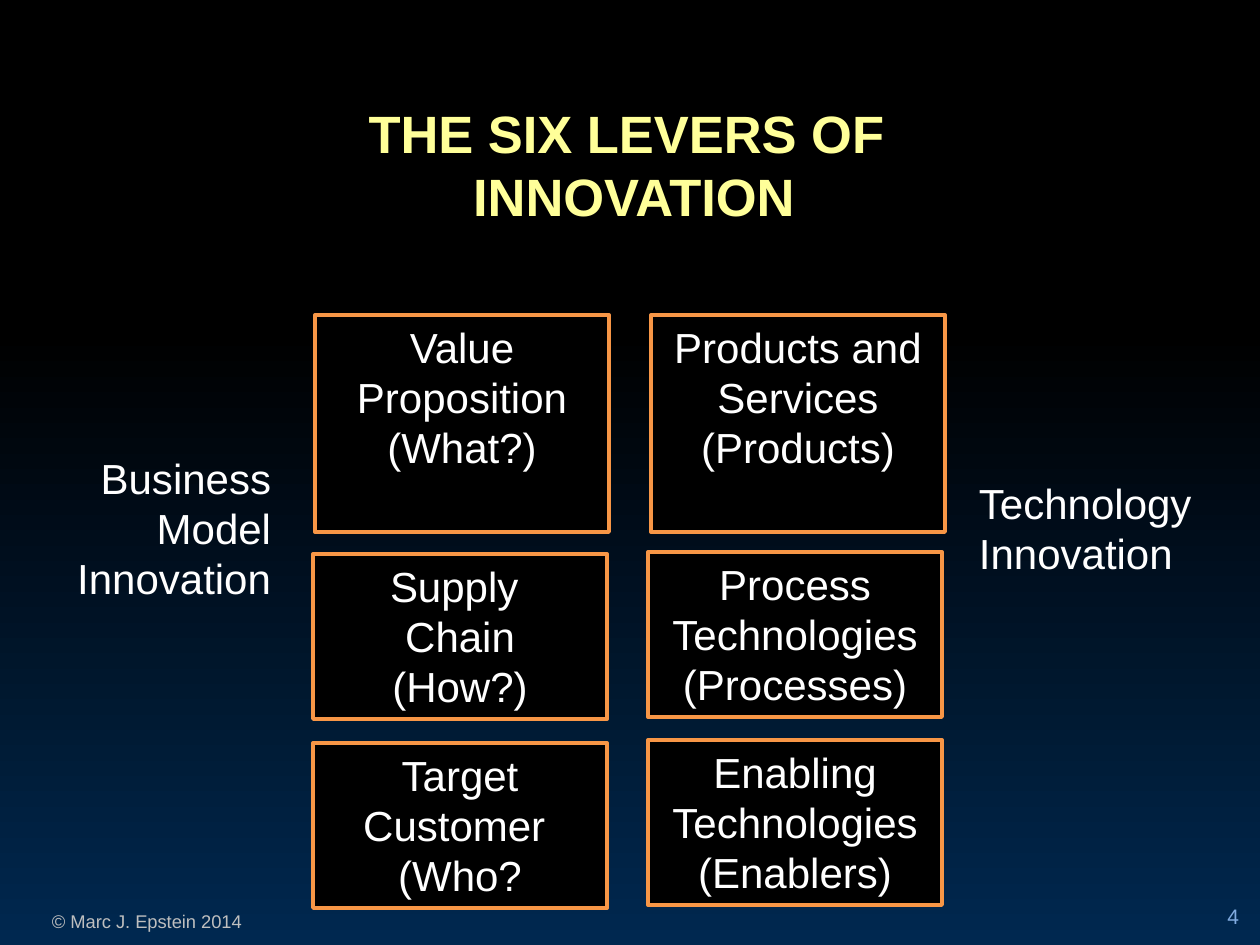
from dataclasses import dataclass

from pptx import Presentation
from pptx.dml.color import RGBColor
from pptx.enum.shapes import MSO_SHAPE
from pptx.enum.text import MSO_ANCHOR, PP_ALIGN
from pptx.util import Emu, Pt

RECTANGLE = MSO_SHAPE.RECTANGLE
TOP, BOTTOM = MSO_ANCHOR.TOP, MSO_ANCHOR.BOTTOM
LEFT, CENTER, RIGHT = PP_ALIGN.LEFT, PP_ALIGN.CENTER, PP_ALIGN.RIGHT

FONT = "Arial"
EMU_PER_PX = 914400 / 126
COLORS = {
    "black": "000000",
    "navy": "002850",
    "white": "FFFFFF",
    "title": "FFFF99",
    "border": "F79646",
    "footer": "BFBFBF",
    "number": "81ABE0",
}
LEVER_WIDTH = 294


@dataclass(frozen=True)
class Lever:
    left: int
    top: int
    height: int
    lines: tuple[str, ...]


@dataclass(frozen=True)
class Label:
    left: int
    top: int
    width: int
    height: int
    lines: tuple[str, ...]
    align: int
    size: float = 24
    color: str = "white"
    bold: bool = False
    anchor: int = TOP
    side_inset: int = 13


LEVERS = [
    Lever(315, 315, 217, ("Value Proposition", "(What?)")),
    Lever(313, 554, 165, ("Supply ", "Chain", "(How?)")),
    Lever(313, 743, 165, ("Target Customer ", "(Who?")),
    Lever(648, 740, 165, ("Enabling Technologies", "(Enablers)")),
    Lever(648, 552, 165, ("Process Technologies", "(Processes)")),
    Lever(651, 315, 217, ("Products and Services", "(Products)")),
]
TITLE = Label(4, 95, 1260, 140, ("THE SIX LEVERS OF ",), CENTER, 30, "title", True)
LABELS = [
    Label(-21, 904, 336, 35, ("© Marc J. Epstein 2014",), CENTER, 10.5, "footer"),
    Label(966, 471, 284, 115, ("Technology", "Innovation"), LEFT),
    Label(0, 446, 284, 165, ("Business Model Innovation",), RIGHT),
    Label(1134, 885, 105, 50, ("4",), RIGHT, 12, "number", False, BOTTOM, 0),
]


def px(length: int) -> Emu:
    return Emu(round(length * EMU_PER_PX))


def rgb(name: str) -> RGBColor:
    return RGBColor.from_string(COLORS[name])


def write_lines(frame, lines, align, size=24, color="white", bold=False) -> None:
    frame.word_wrap = True
    for index, line in enumerate(lines):
        para = frame.add_paragraph() if index else frame.paragraphs[0]
        para.text = line
        para.alignment = align
        para.font.name = FONT
        para.font.size = Pt(size)
        para.font.bold = bold
        para.font.color.rgb = rgb(color)


def draw_lever(page, lever: Lever) -> None:
    box = page.shapes.add_shape(
        RECTANGLE, px(lever.left), px(lever.top), px(LEVER_WIDTH), px(lever.height)
    )
    box.shadow.inherit = False
    box.fill.solid()
    box.fill.fore_color.rgb = rgb("black")
    box.line.color.rgb = rgb("border")
    box.line.width = Pt(2.25)
    box.text_frame.vertical_anchor = TOP
    write_lines(box.text_frame, lever.lines, CENTER)


def draw_label(page, label: Label):
    box = page.shapes.add_textbox(
        px(label.left), px(label.top), px(label.width), px(label.height)
    )
    frame = box.text_frame
    frame.vertical_anchor = label.anchor
    frame.margin_left = frame.margin_right = px(label.side_inset)
    write_lines(frame, label.lines, label.align, label.size, label.color, label.bold)
    return box


def draw_title(page) -> None:
    para = draw_label(page, TITLE).text_frame.paragraphs[0]
    para.add_line_break()
    para.add_run().text = "INNOVATION"


def paint_background(page) -> None:
    fill = page.background.fill
    fill.gradient()
    fill.gradient_angle = 270
    stops = ((0.35, "black"), (1.0, "navy"))
    for stop, (position, color) in zip(fill.gradient_stops, stops):
        stop.position = position
        stop.color.rgb = rgb(color)


def main() -> None:
    deck = Presentation()
    deck.slide_width, deck.slide_height = px(1260), px(945)
    page = deck.slides.add_slide(deck.slide_layouts[6])
    paint_background(page)
    draw_title(page)
    for lever in LEVERS:
        draw_lever(page, lever)
    for label in LABELS:
        draw_label(page, label)
    deck.save("out.pptx")


if __name__ == "__main__":
    main()
